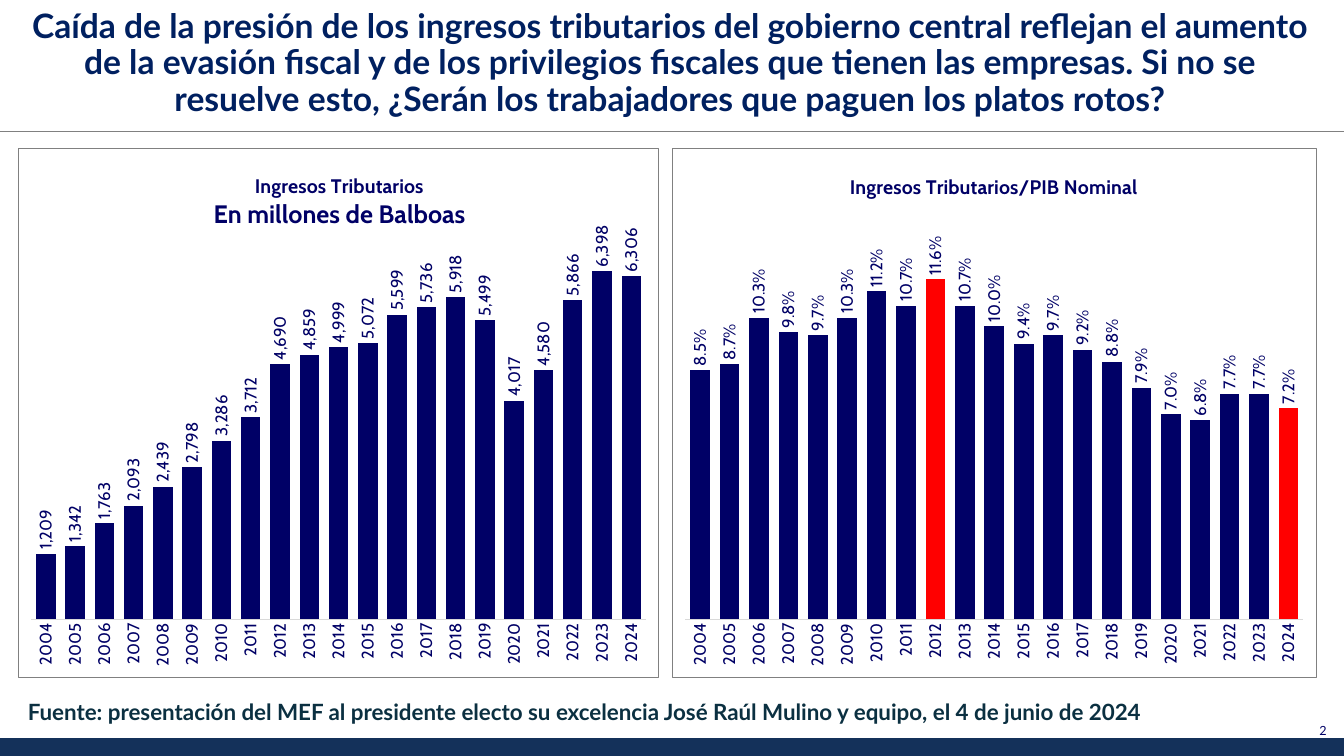
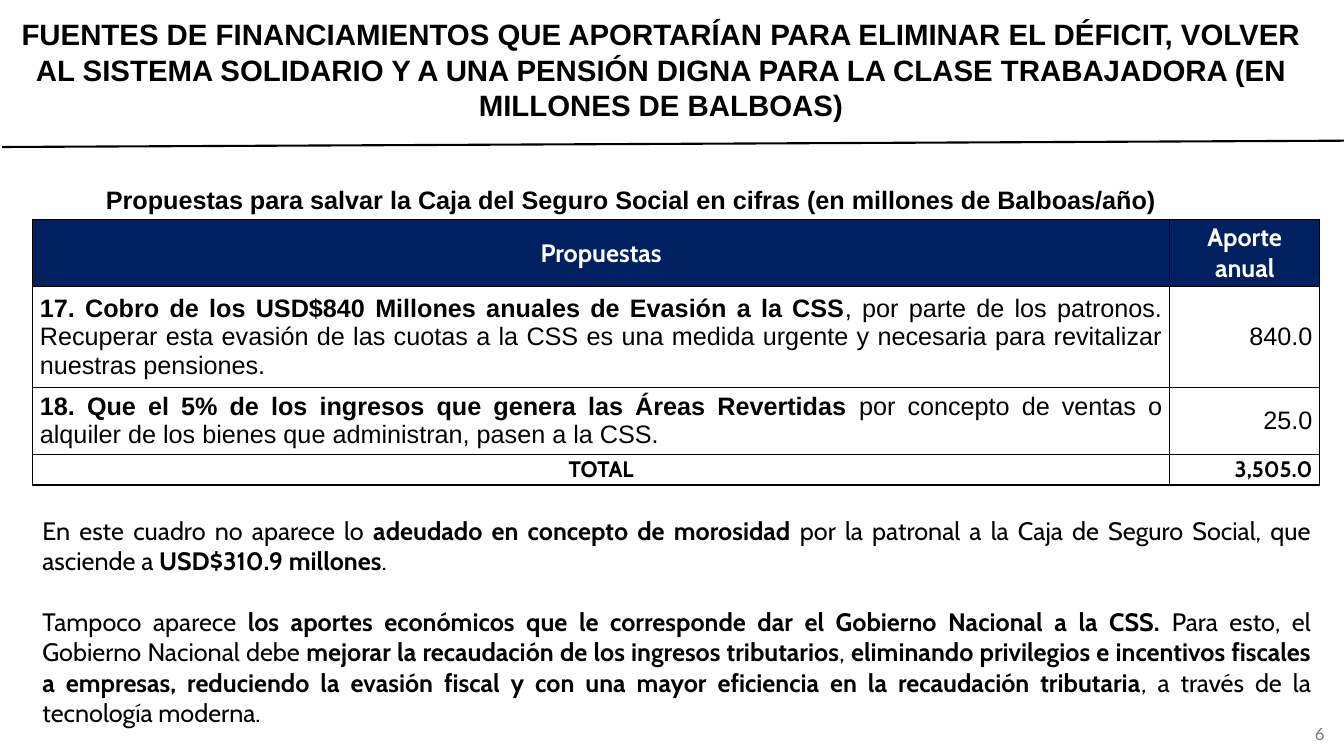
"""Build two slides on tax revenue and on funding for social security."""
from lxml.etree import SubElement
from pptx import Presentation
from pptx.chart.data import CategoryChartData
from pptx.dml.color import RGBColor
from pptx.enum.chart import XL_CHART_TYPE, XL_LABEL_POSITION, XL_TICK_MARK
from pptx.enum.shapes import MSO_CONNECTOR, MSO_SHAPE
from pptx.enum.text import MSO_ANCHOR, MSO_AUTO_SIZE, PP_ALIGN
from pptx.oxml import parse_xml
from pptx.oxml.ns import nsdecls, qn
from pptx.util import Pt

PX = 9525
BLACK = RGBColor(0x00, 0x00, 0x00)
WHITE = RGBColor(0xFF, 0xFF, 0xFF)
NAVY = RGBColor(0x00, 0x20, 0x60)
CHART_BLUE = RGBColor(0x00, 0x00, 0x66)
RED = RGBColor(0xFF, 0x00, 0x00)
BAND_BLUE = RGBColor(0x14, 0x31, 0x5A)
SOURCE_TEAL = RGBColor(0x0B, 0x30, 0x41)
GRAY = RGBColor(0x80, 0x80, 0x80)
NUMBER_GRAY = RGBColor(0x79, 0x79, 0x79)
AXIS_GRAY = RGBColor(0xD9, 0xD9, 0xD9)
ARIAL, CABIN, LATO = "Arial", "Cabin", "Lato"


def write(paragraph, runs, size, font, color, align):
    paragraph.alignment = align
    for text, bold in runs:
        run = paragraph.add_run()
        run.text = text
        run.font.size = Pt(size)
        run.font.name = font
        run.font.bold = bold
        run.font.color.rgb = color


def place(element, index, **fractions):
    for old_layout in element.findall(qn("c:layout")):
        element.remove(old_layout)
    layout = parse_xml(f"<c:layout {nsdecls('c')}/>")
    manual = SubElement(layout, qn("c:manualLayout"))
    if "w" in fractions:
        SubElement(manual, qn("c:layoutTarget")).set("val", "inner")
    for side in "xy":
        SubElement(manual, qn(f"c:{side}Mode")).set("val", "edge")
    for key, value in fractions.items():
        SubElement(manual, qn(f"c:{key}")).set("val", str(value))
    element.insert(index, layout)


prs = Presentation()
prs.slide_width = 1280 * PX
prs.slide_height = 720 * PX

headings = [
    ("Caída de la presión de los ingresos tributarios del gobierno central reflejan el "
     "aumento de la evasión fiscal y de los privilegios fiscales que tienen las empresas. "
     "Si no se resuelve esto, ¿Serán los trabajadores que paguen los platos rotos?",
     (12, 13, 1252, 96), 24, LATO, NAVY, 0.9),
    ("FUENTES DE FINANCIAMIENTOS QUE APORTARÍAN PARA ELIMINAR EL DÉFICIT, VOLVER AL "
     "SISTEMA SOLIDARIO Y A UNA PENSIÓN DIGNA PARA LA CLASE TRABAJADORA (EN MILLONES "
     "DE BALBOAS)",
     (2, 10, 1255, 112), 21, ARIAL, BLACK, 1.0),
]
dividers = [((0, 125, 1280, 125), GRAY, 1), ((2, 140, 1280, 134), BLACK, 1.5)]
page_numbers = [
    ("2", (1231, 684, 42, 38), 9, CHART_BLUE, MSO_ANCHOR.TOP),
    ("6", (1223, 680, 48, 38), 12, NUMBER_GRAY, MSO_ANCHOR.MIDDLE),
]

slides = []
for heading, divider, page_number in zip(headings, dividers, page_numbers):
    slide = prs.slides.add_slide(prs.slide_layouts[5])
    slides.append(slide)

    wording, box, size, font, color, spacing = heading
    title = slide.shapes.title
    title.left, title.top, title.width, title.height = [v * PX for v in box]
    title.text_frame.auto_size = MSO_AUTO_SIZE.NONE
    title.text_frame.vertical_anchor = MSO_ANCHOR.MIDDLE
    title_line = title.text_frame.paragraphs[0]
    title_line.line_spacing = spacing
    write(title_line, [(wording, True)], size, font, color, PP_ALIGN.CENTER)

    ends, color, weight = divider
    rule = slide.shapes.add_connector(MSO_CONNECTOR.STRAIGHT, *[v * PX for v in ends])
    rule.line.color.rgb = color
    rule.line.width = Pt(weight)
    SubElement(rule._element.spPr, qn("a:effectLst"))

    digit, box, size, color, anchor = page_number
    number = slide.shapes.add_textbox(*[v * PX for v in box]).text_frame
    number.word_wrap = True
    number.vertical_anchor = anchor
    write(number.paragraphs[0], [(digit, False)], size, LATO, color, PP_ALIGN.RIGHT)

revenue_slide, proposals_slide = slides

band = revenue_slide.shapes.add_shape(MSO_SHAPE.RECTANGLE, 0, 703 * PX, 1280 * PX, 17 * PX)
band.shadow.inherit = False
band.fill.solid()
band.fill.fore_color.rgb = BAND_BLUE
band.line.fill.background()

years = [str(year) for year in range(2004, 2025)]
revenue = [1209, 1342, 1763, 2093, 2439, 2798, 3286, 3712, 4690, 4859, 4999, 5072, 5599,
           5736, 5918, 5499, 4017, 4580, 5866, 6398, 6306]
revenue_share = [0.085, 0.087, 0.103, 0.098, 0.097, 0.103, 0.112, 0.107, 0.116, 0.107,
                 0.1, 0.094, 0.097, 0.092, 0.088, 0.079, 0.07, 0.068, 0.077, 0.077, 0.072]
charts = [
    ((17, 141, 611, 505), "Ingresos Tributarios", revenue, "#,##0", 7000, 50, [],
     [("Ingresos Tributarios", 14), ("En millones de Balboas", 18)], 0.3),
    ((640, 141, 614, 505), "Ingresos Tributarios/PIB Nominal", revenue_share, "0.0%", 0.13,
     -27, ["2012", "2024"], [("Ingresos Tributarios/PIB Nominal", 14)], 0.27),
]
for box, name, values, number_format, top, overlap, marked, title_lines, title_x in charts:
    data = CategoryChartData(number_format=number_format)
    data.categories = years
    data.add_series(name, values)
    chart = revenue_slide.shapes.add_chart(
        XL_CHART_TYPE.COLUMN_CLUSTERED, *[v * PX for v in box], data).chart
    chart.font.size = Pt(10)
    chart.font.name = LATO
    chart.font.color.rgb = BLACK
    chart.has_legend = False

    chart.has_title = True
    chart_title = chart.chart_title.text_frame
    for index, (line, size) in enumerate(title_lines):
        paragraph = chart_title.add_paragraph() if index else chart_title.paragraphs[0]
        write(paragraph, [(line, True)], size, CABIN, CHART_BLUE, PP_ALIGN.CENTER)
    place(chart.chart_title._element, 1, x=title_x, y=0.04)
    place(chart._chartSpace.chart.plotArea, 0, x=0.02, y=0.17, w=0.96, h=0.72)

    value_axis = chart.value_axis
    value_axis.minimum_scale = 0
    value_axis.maximum_scale = top
    value_axis.has_major_gridlines = False
    value_axis.visible = False
    year_axis = chart.category_axis
    year_axis.major_tick_mark = XL_TICK_MARK.NONE
    year_axis.format.line.color.rgb = AXIS_GRAY
    year_axis.format.line.width = Pt(0.75)

    plot = chart.plots[0]
    plot.gap_width = 50
    plot.overlap = overlap
    plot.vary_by_categories = False
    bars = plot.series[0]
    bars.format.fill.solid()
    bars.format.fill.fore_color.rgb = CHART_BLUE
    for year in marked:
        marked_fill = bars.points[years.index(year)].format.fill
        marked_fill.solid()
        marked_fill.fore_color.rgb = RED

    plot.has_data_labels = True
    labels = plot.data_labels
    labels.show_value = True
    labels.number_format = number_format
    labels.number_format_is_linked = False
    labels.position = XL_LABEL_POSITION.OUTSIDE_END
    for font, owner in ((labels.font, labels), (year_axis.tick_labels.font, year_axis)):
        font.size = Pt(12)
        font.name = CABIN
        font.color.rgb = CHART_BLUE
        turned = owner._element.find(qn("c:txPr")).find(qn("a:bodyPr"))
        turned.set("rot", "-5400000")
        turned.set("vert", "horz")

    chart._chartSpace.chart.addnext(parse_xml(
        f"<c:spPr {nsdecls('c', 'a')}><a:noFill/><a:ln w=\"{Pt(0.75)}\"><a:solidFill>"
        f"<a:srgbClr val=\"{GRAY}\"/></a:solidFill></a:ln></c:spPr>"))

source = revenue_slide.shapes.add_textbox(17 * PX, 660 * PX, 1237 * PX, 36 * PX).text_frame
source.word_wrap = True
write(source.paragraphs[0],
      [("Fuente: presentación del MEF al presidente electo su excelencia José Raúl Mulino "
        "y equipo, el 4 de junio de 2024", True)], 16, LATO, SOURCE_TEAL, PP_ALIGN.JUSTIFY)

caption = proposals_slide.shapes.add_textbox(2 * PX, 171 * PX, 1198 * PX, 38 * PX).text_frame
caption.word_wrap = True
write(caption.paragraphs[0],
      [("Propuestas para salvar la Caja del Seguro Social en cifras (en millones de "
        "Balboas/año)", True)], 18, ARIAL, BLACK, PP_ALIGN.CENTER)

column_widths = [1083, 143]
proposals = [
    (64, 18, CABIN, WHITE, (PP_ALIGN.CENTER, PP_ALIGN.CENTER),
     [("Propuestas", True)], [("Aporte anual", True)]),
    (96, 18, ARIAL, BLACK, (PP_ALIGN.JUSTIFY, PP_ALIGN.RIGHT),
     [("17. Cobro de los USD$840 Millones anuales de Evasión a la CSS", True),
      (", por parte de los patronos. Recuperar esta evasión de las cuotas a la CSS es una "
       "medida urgente y necesaria para revitalizar nuestras pensiones.", False)],
     [("840.0", False)]),
    (64, 18, ARIAL, BLACK, (PP_ALIGN.JUSTIFY, PP_ALIGN.RIGHT),
     [("18. Que el 5% de los ingresos que genera las Áreas Revertidas ", True),
      ("por concepto de ventas o alquiler de los bienes que administran, pasen a la CSS.",
       False)],
     [("25.0", False)]),
    (29, 16, CABIN, BLACK, (PP_ALIGN.CENTER, PP_ALIGN.RIGHT),
     [("TOTAL", True)], [("3,505.0", True)]),
]
table = proposals_slide.shapes.add_table(
    len(proposals), len(column_widths), 31 * PX, 209 * PX, sum(column_widths) * PX,
    sum(row[0] for row in proposals) * PX).table
table.first_row = False
table.horz_banding = False
for column, width in zip(table.columns, column_widths):
    column.width = width * PX
for row, (height, size, font, color, aligns, *contents) in zip(table.rows, proposals):
    row.height = height * PX
    for cell, align, runs in zip(row.cells, aligns, contents):
        cell.margin_left = cell.margin_right = 7 * PX
        cell.margin_top = cell.margin_bottom = 0
        cell.vertical_anchor = MSO_ANCHOR.MIDDLE
        write(cell.text_frame.paragraphs[0], runs, size, font, color, align)
        for side in "LRTB":
            cell._tc.get_or_add_tcPr().append(parse_xml(
                f"<a:ln{side} {nsdecls('a')} w=\"{Pt(1)}\"><a:solidFill>"
                f"<a:srgbClr val=\"{BLACK}\"/></a:solidFill></a:ln{side}>"))
        if color == WHITE:
            cell.fill.solid()
            cell.fill.fore_color.rgb = NAVY
        else:
            cell.fill.background()

remarks = [
    [("En este cuadro no aparece lo ", False),
     ("adeudado en concepto de morosidad", True),
     (" por la patronal a la Caja de Seguro Social, que asciende a ", False),
     ("USD$310.9 millones", True),
     (".", False)],
    [("Tampoco aparece ", False),
     ("los aportes económicos que le corresponde dar el Gobierno Nacional a la CSS. ", True),
     ("Para esto, el Gobierno Nacional debe ", False),
     ("mejorar la recaudación de los ingresos tributarios", True),
     (", ", False),
     ("eliminando privilegios e incentivos fiscales a empresas, reduciendo la evasión "
      "fiscal y con una mayor eficiencia en la recaudación tributaria", True),
     (", a través de la tecnología moderna.", False)],
]
closing = proposals_slide.shapes.add_textbox(31 * PX, 486 * PX, 1227 * PX, 213 * PX).text_frame
closing.word_wrap = True
for index, remark in enumerate(remarks):
    paragraph = closing.add_paragraph() if index else closing.paragraphs[0]
    paragraph.space_before = Pt(22 * index)
    write(paragraph, remark, 18, CABIN, BLACK, PP_ALIGN.JUSTIFY)

prs.save("out.pptx")
